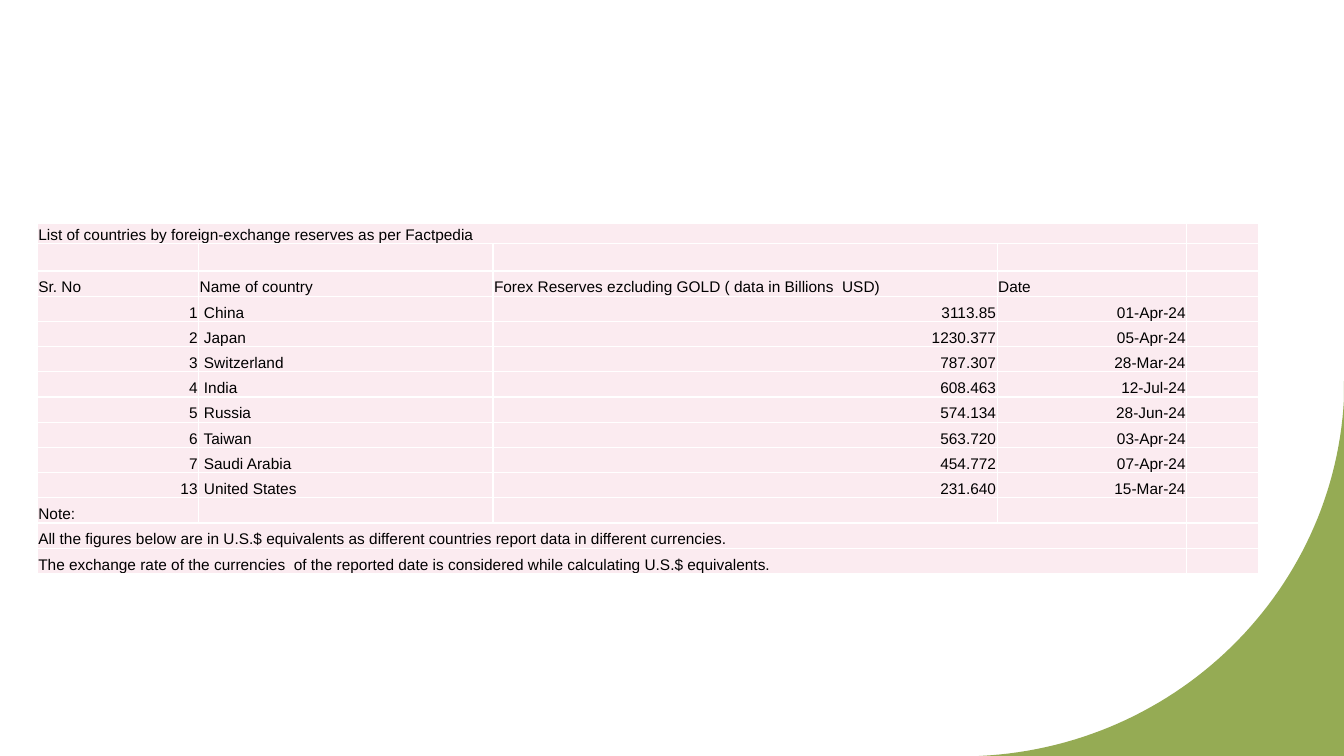
from lxml import etree
from pptx import Presentation
from pptx.dml.color import RGBColor
from pptx.enum.text import MSO_ANCHOR, PP_ALIGN
from pptx.oxml.ns import qn
from pptx.util import Inches, Pt

BOTTOM = MSO_ANCHOR.BOTTOM
LEFT, RIGHT = PP_ALIGN.LEFT, PP_ALIGN.RIGHT

COLORS = {"leaf": "95AB54", "cell": "FBEBF0", "rule": "FFFFFF", "text": "000000"}
FONT, SIZE = "Arial", 11

ROWS = [
    ["List of countries by foreign-exchange reserves as per Factpedia"],
    [],
    ["Sr. No", "Name of country",
     "Forex Reserves ezcluding GOLD ( data in Billions  USD)", "Date"],
    ["1", " China", "3113.85", "01-Apr-24"],
    ["2", " Japan", "1230.377", "05-Apr-24"],
    ["3", " Switzerland", "787.307", "28-Mar-24"],
    ["4", " India", "608.463", "12-Jul-24"],
    ["5", " Russia", "574.134", "28-Jun-24"],
    ["6", " Taiwan", "563.720", "03-Apr-24"],
    ["7", " Saudi Arabia", "454.772", "07-Apr-24"],
    ["13", " United States", "231.640", "15-Mar-24"],
    ["Note:"],
    ["All the figures below are in U.S.$ equivalents as different countries "
     "report data in different currencies."],
    ["The exchange rate of the currencies  of the reported date is considered "
     "while calculating U.S.$ equivalents."],
]
WIDTHS = [1.6, 2.92, 5, 1.88, 0.71]
HEIGHTS = [0.13, 0.27] + [0.25] * 12
WIDE = (0, 12, 13)
DATA = range(3, 11)
NUMS = (0, 2, 3)

CURVE = [(9.71, 7.5), (11.67, 7.41), (13.23, 5.87), (13.33, 3.96)]
EDGE = [(13.33, 3.78), (13.33, 7.5), (9.63, 7.5)]
STEPS = 60


def rgb(name):
    return RGBColor.from_string(COLORS[name])


def bend(t):
    u = 1 - t
    parts = (u ** 3, 3 * u * u * t, 3 * u * t * t, t ** 3)
    return tuple(sum(k * p[i] for k, p in zip(parts, CURVE)) for i in (0, 1))


def draw_leaf(slide):
    dots = EDGE + [bend(n / STEPS) for n in range(STEPS + 1)]
    dots = [(Inches(x), Inches(y)) for x, y in dots]
    pen = slide.shapes.build_freeform(*dots[0])
    pen.add_line_segments(dots[1:], close=True)
    leaf = pen.convert_to_shape()
    leaf.shadow.inherit = False
    leaf.fill.solid()
    leaf.fill.fore_color.rgb = rgb("leaf")
    leaf.line.fill.background()


def add_rules(cell):
    props = cell._tc.get_or_add_tcPr()
    for i, side in enumerate(("a:lnL", "a:lnR", "a:lnT", "a:lnB")):
        line = etree.Element(qn(side), w=str(Pt(1)))
        fill = etree.SubElement(line, qn("a:solidFill"))
        etree.SubElement(fill, qn("a:srgbClr"), val=COLORS["rule"])
        props.insert(i, line)


def style_cell(cell, text, align):
    cell.fill.solid()
    cell.fill.fore_color.rgb = rgb("cell")
    add_rules(cell)
    cell.margin_left = cell.margin_right = cell.margin_top = Inches(0.01)
    cell.margin_bottom = 0
    cell.vertical_anchor = BOTTOM
    para = cell.text_frame.paragraphs[0]
    para.text = text
    para.alignment = align
    for run in para.runs:
        run.font.name = FONT
        run.font.size = Pt(SIZE)
        run.font.color.rgb = rgb("text")
    if not text:
        etree.SubElement(para._p, qn("a:endParaRPr"), sz=str(SIZE * 100))


def draw_table(slide):
    frame = slide.shapes.add_table(
        len(ROWS), len(WIDTHS), Inches(0.37), Inches(2.22),
        Inches(sum(WIDTHS)), Inches(sum(HEIGHTS)))
    table = frame.table
    table.first_row = table.horz_banding = False
    for col, width in zip(table.columns, WIDTHS):
        col.width = Inches(width)
    for row, height in zip(table.rows, HEIGHTS):
        row.height = Inches(height)
    for r, texts in enumerate(ROWS):
        for c in range(len(WIDTHS)):
            text = texts[c] if c < len(texts) else ""
            align = RIGHT if r in DATA and c in NUMS else LEFT
            style_cell(table.cell(r, c), text, align)
    for r in WIDE:
        table.cell(r, 0).merge(table.cell(r, 3))


def main():
    deck = Presentation()
    deck.slide_width, deck.slide_height = Inches(13.33), Inches(7.5)
    slide = deck.slides.add_slide(deck.slide_layouts[6])
    draw_leaf(slide)
    draw_table(slide)
    deck.save("out.pptx")


if __name__ == "__main__":
    main()
